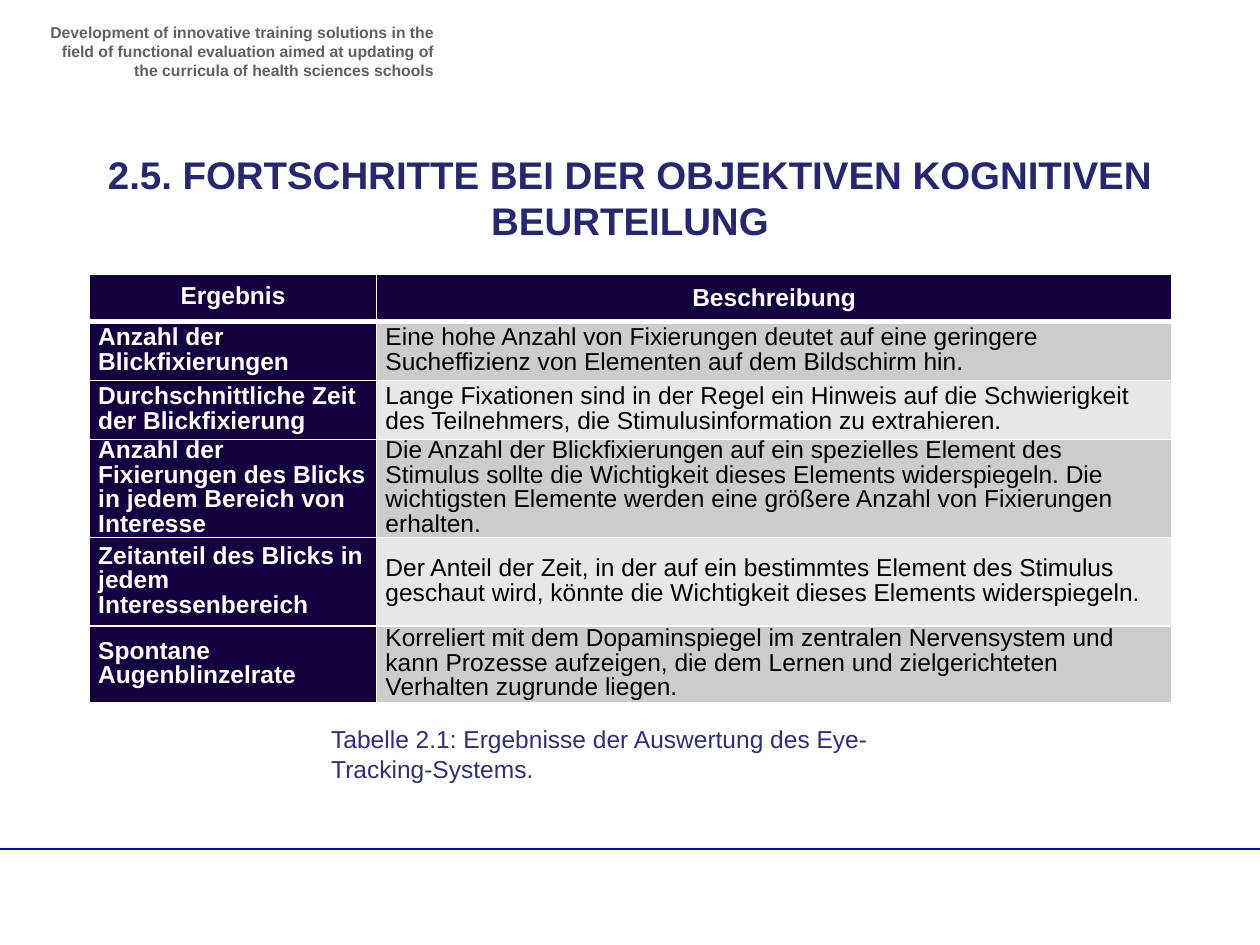
from lxml.etree import SubElement
from pptx import Presentation
from pptx.dml.color import RGBColor
from pptx.enum.shapes import MSO_CONNECTOR
from pptx.enum.text import MSO_ANCHOR, PP_ALIGN
from pptx.oxml.ns import qn
from pptx.util import Inches, Pt

COLORS = {
    "white": "FFFFFF", "black": "000000", "header": "140041",
    "band_dark": "CCCCCF", "band_light": "E7E7E9", "title": "262673",
    "caption": "2D2D8A", "project": "606060", "rule": "0404E6",
}
COLUMN_WIDTHS = [2.28, 6.31]
ROW_HEIGHTS = [0.37, 0.47, 0.47, 0.7, 0.7, 0.61]
ROWS = [
    ("Ergebnis", "Beschreibung"),
    ("Anzahl der Blickfixierungen",
     "Eine hohe Anzahl von Fixierungen deutet auf eine geringere "
     "Sucheffizienz von Elementen auf dem Bildschirm hin."),
    ("Durchschnittliche Zeit der Blickfixierung",
     "Lange Fixationen sind in der Regel ein Hinweis auf die Schwierigkeit "
     "des Teilnehmers, die Stimulusinformation zu extrahieren."),
    ("Anzahl der Fixierungen des Blicks in jedem Bereich von Interesse",
     "Die Anzahl der Blickfixierungen auf ein spezielles Element des Stimulus "
     "sollte die Wichtigkeit dieses Elements widerspiegeln. Die wichtigsten "
     "Elemente werden eine größere Anzahl von Fixierungen erhalten."),
    ("Zeitanteil des Blicks in jedem Interessenbereich",
     "Der Anteil der Zeit, in der auf ein bestimmtes Element des Stimulus "
     "geschaut wird, könnte die Wichtigkeit dieses Elements widerspiegeln."),
    ("Spontane Augenblinzelrate",
     "Korreliert mit dem Dopaminspiegel im zentralen Nervensystem und kann "
     "Prozesse aufzeigen, die dem Lernen und zielgerichteten Verhalten "
     "zugrunde liegen."),
]


def rgb(name):
    return RGBColor.from_string(COLORS[name])


def write_text(frame, text, size, color, bold=False, align=PP_ALIGN.LEFT):
    frame.word_wrap = True
    paragraph = frame.paragraphs[0]
    paragraph.text = text
    paragraph.alignment = align
    font = paragraph.font
    font.name, font.size, font.bold = "Arial", Pt(size), bold
    font.color.rgb = rgb(color)
    return paragraph


def add_text(slide, box, text, size, color, **style):
    shape = slide.shapes.add_textbox(*map(Inches, box))
    write_text(shape.text_frame, text, size, color, **style)


def set_title(slide, box, text):
    title = slide.shapes.title
    title.left, title.top, title.width, title.height = map(Inches, box)
    title.text_frame.vertical_anchor = MSO_ANCHOR.TOP
    write_text(title.text_frame, text, 22, "title", bold=True, align=PP_ALIGN.CENTER)


def add_rule(slide, left, right, y):
    rule = slide.shapes.add_connector(
        MSO_CONNECTOR.STRAIGHT, Inches(left), Inches(y), Inches(right), Inches(y))
    rule.line.color.rgb = rgb("rule")
    rule.line.width = Pt(1)
    SubElement(rule._element.spPr, qn("a:effectLst"))


def set_borders(cell, bottom_width):
    """Draw white borders; they must precede the fill in the cell's XML."""
    properties = cell._tc.get_or_add_tcPr()
    for side in ("lnL", "lnR", "lnT", "lnB"):
        width = bottom_width if side == "lnB" else 1
        line = SubElement(properties, qn(f"a:{side}"), w=str(Pt(width)))
        fill = SubElement(line, qn("a:solidFill"))
        SubElement(fill, qn("a:srgbClr"), val=COLORS["white"])


def fill_cell(cell, text, row, column):
    is_header = row == 0
    is_dark = is_header or column == 0
    band = "band_dark" if row % 2 else "band_light"
    set_borders(cell, 3 if is_header else 1)
    cell.fill.solid()
    cell.fill.fore_color.rgb = rgb("header" if is_dark else band)
    cell.vertical_anchor = MSO_ANCHOR.MIDDLE
    cell.margin_left = cell.margin_right = Inches(0.07)
    cell.margin_top = cell.margin_bottom = 0
    paragraph = write_text(
        cell.text_frame, text, 14, "white" if is_dark else "black", bold=is_dark,
        align=PP_ALIGN.CENTER if is_header else PP_ALIGN.LEFT)
    if not (is_header and column == 1):
        paragraph.line_spacing = Pt(14)


def add_results_table(slide, left, top):
    table = slide.shapes.add_table(
        len(ROWS), len(COLUMN_WIDTHS), Inches(left), Inches(top),
        Inches(sum(COLUMN_WIDTHS)), Inches(sum(ROW_HEIGHTS))).table
    for column, width in zip(table.columns, COLUMN_WIDTHS):
        column.width = Inches(width)
    for row, height in zip(table.rows, ROW_HEIGHTS):
        row.height = Inches(height)
    for row, texts in enumerate(ROWS):
        for column, text in enumerate(texts):
            fill_cell(table.cell(row, column), text, row, column)


def main():
    presentation = Presentation()
    presentation.slide_width, presentation.slide_height = Inches(10), Inches(7.5)
    slide = presentation.slides.add_slide(presentation.slide_layouts[5])
    add_rule(slide, -0.05, 10, 6.74)
    add_text(slide, (0.28, 0.13, 3.26, 0.47),
             "Development of innovative training solutions in the ﬁeld of functional "
             "evaluation aimed at updating of the curricula of health sciences schools",
             9, "project", bold=True, align=PP_ALIGN.RIGHT)
    set_title(slide, (0.1, 1.15, 9.8, 0.47),
              "2.5. FORTSCHRITTE BEI DER OBJEKTIVEN KOGNITIVEN BEURTEILUNG")
    add_results_table(slide, 0.71, 2.18)
    add_text(slide, (2.53, 5.7, 5.15, 0.34),
             "Tabelle 2.1: Ergebnisse der Auswertung des Eye-Tracking-Systems.",
             14, "caption")
    presentation.save("out.pptx")


if __name__ == "__main__":
    main()
